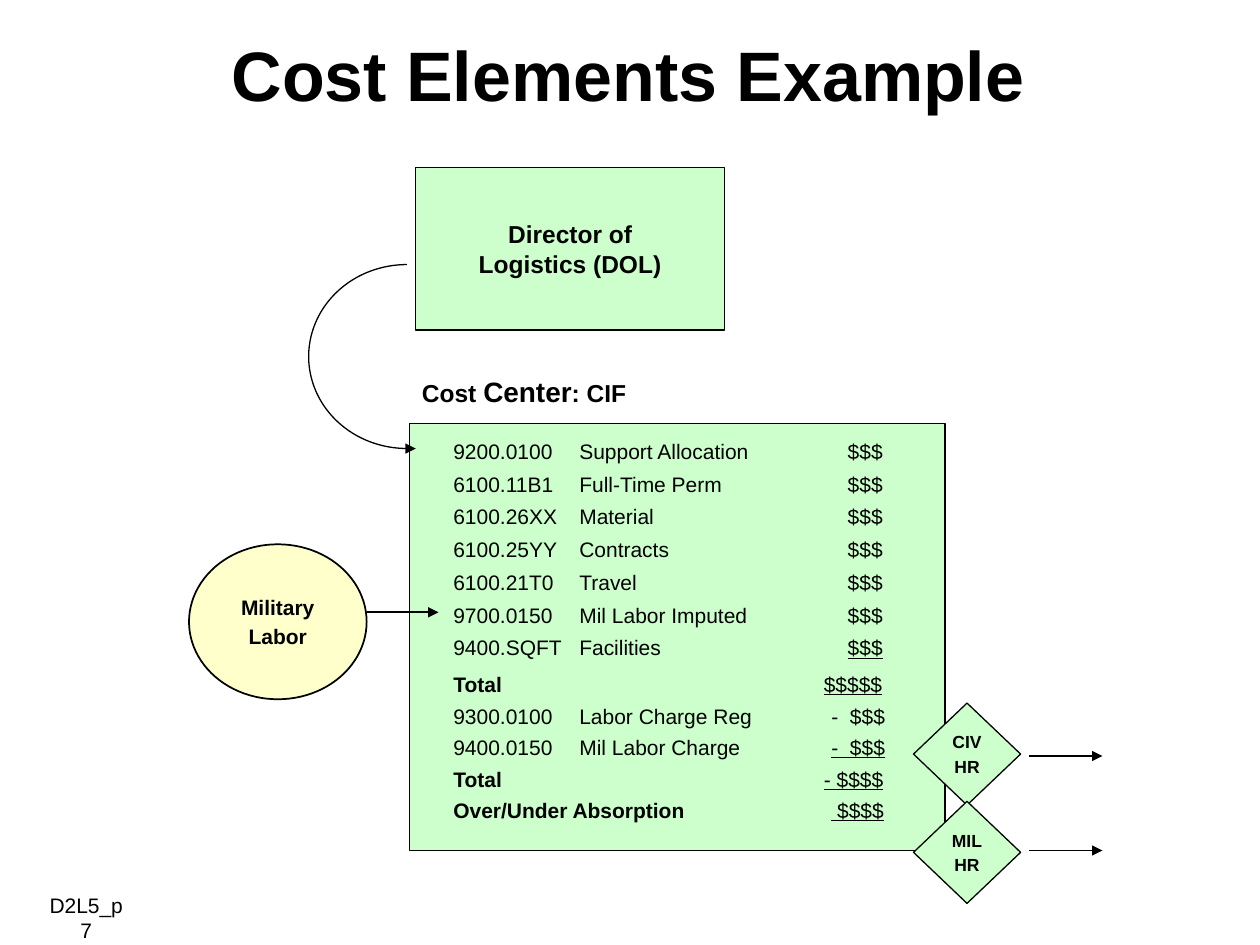
from lxml import etree
from pptx import Presentation
from pptx.dml.color import RGBColor
from pptx.enum.shapes import MSO_CONNECTOR, MSO_SHAPE
from pptx.enum.text import MSO_ANCHOR, PP_ALIGN
from pptx.oxml.ns import qn
from pptx.util import Inches, Pt

LEFT, CENTER = PP_ALIGN.LEFT, PP_ALIGN.CENTER
TOP, MIDDLE = MSO_ANCHOR.TOP, MSO_ANCHOR.MIDDLE
RECTANGLE, OVAL = MSO_SHAPE.RECTANGLE, MSO_SHAPE.OVAL
DIAMOND, ARC = MSO_SHAPE.DIAMOND, MSO_SHAPE.ARC
BLACK, GREEN, YELLOW = "000000", "CCFFCC", "FFFFCC"

# Code, label, value, value position, value underlined
COST_ROWS = [
    ("9200.0100", "Support Allocation", "$$$", 3.13, False),
    ("6100.11B1", "Full-Time Perm", "$$$", 3.13, False),
    ("6100.26XX", "Material", "$$$", 3.13, False),
    ("6100.25YY", "Contracts", "$$$", 3.13, False),
    ("6100.21T0", "Travel", "$$$", 3.13, False),
    ("9700.0150", "Mil Labor Imputed", "$$$", 3.13, False),
    ("9400.SQFT", "Facilities", "$$$", 3.13, True),
]
# A row without a label is a bold sum row
ABSORPTION_ROWS = [
    ("Total", "", "$$$$$", 2.94, True),
    ("9300.0100", "Labor Charge Reg", "-  $$$", 3, False),
    ("9400.0150", "Mil Labor Charge", "-  $$$", 3, True),
    ("Total", "", "- $$$$", 2.94, True),
    ("Over/Under Absorption", "", " $$$$", 3, True),
]
# Rows, first top, step
ROW_BLOCKS = [(COST_ROWS, 3.48, 0.26), (ABSORPTION_ROWS, 5.33, 0.25)]
LABEL_TAB = 1

# Kind, box, fill, line width, lines of text, size, space after
NODES = [
    (RECTANGLE, (3.25, 3.36, 4.25, 3.39), GREEN, 0.75, [], 12, 0),
    (DIAMOND, (7.25, 5.58, 0.85, 0.81), GREEN, 0.75, ["CIV", "HR"], 10, 2),
    (OVAL, (1.5, 4.32, 1.41, 1.23), YELLOW, 1, ["Military", "Labor"], 12, 2),
    (RECTANGLE, (3.3, 1.33, 2.45, 1.29), GREEN, 0.75,
     ["Director of", "Logistics (DOL)"], 14, 0),
    (DIAMOND, (7.25, 6.36, 0.85, 0.81), GREEN, 0.75, ["MIL", "HR"], 10, 2),
]
ALLOCATION_ARC = (2.45, 2.1, 1.56, 1.46)
# Start x, end x, y, width
ARROWS = [
    (3.21, 3.3, 3.56, 0.75),
    (2.91, 3.48, 4.86, 1),
    (8.17, 8.75, 6, 1),
    (8.17, 8.75, 6.75, 1),
]
# Box, top inset, alignment, runs of (text, size, bold)
TEXTS = [
    ((1.32, 0.25, 7.33, 0.67), 0, CENTER, [("Cost Elements Example", 40, True)]),
    ((3.25, 2.92, 2.27, 0.37), 0.05, LEFT,
     [("Cost ", 14, True), ("Center", 16, True), (": CIF", 14, True)]),
    ((0.25, 7.08, 0.87, 0.2), 0, CENTER, [("D2L5_p7", 12, False)]),
]


def color(value):
    return RGBColor.from_string(value)


def format_font(font, size, bold=False, underline=False):
    font.name = "Arial"
    font.size = Pt(size)
    font.bold = bold
    font.underline = underline
    font.color.rgb = color(BLACK)


def set_line(line, width):
    line.color.rgb = color(BLACK)
    line.width = Pt(width)


def add_text(slide, box, inset, alignment, runs, tabs=()):
    """Add a one-paragraph text box; each run is (text, size, bold[, underline])."""
    text_frame = slide.shapes.add_textbox(*map(Inches, box)).text_frame
    text_frame.word_wrap = True
    text_frame.vertical_anchor = TOP
    text_frame.margin_top = text_frame.margin_bottom = Inches(inset)
    paragraph = text_frame.paragraphs[0]
    paragraph.alignment = alignment
    if tabs:
        tab_list = etree.SubElement(paragraph._p.get_or_add_pPr(), qn("a:tabLst"))
        for position in tabs:
            etree.SubElement(tab_list, qn("a:tab"), pos=str(Inches(position)), algn="l")
    for text, *style in runs:
        run = paragraph.add_run()
        run.text = text
        format_font(run.font, *style)


def add_row(slide, top, code, label, value, value_tab, underline):
    if label:
        lead, tabs = f"{code}\t{label}\t", (LABEL_TAB, value_tab)
    else:
        lead, tabs = f"{code}\t", (value_tab,)
    runs = [(lead, 12, not label), (value, 12, False, underline)]
    add_text(slide, (3.5, top, 4.17, 0.2), 0, LEFT, runs, tabs)


def add_node(slide, kind, box, fill, width, lines, size, space_after):
    shape = slide.shapes.add_shape(kind, *map(Inches, box))
    shape.shadow.inherit = False
    shape.fill.solid()
    shape.fill.fore_color.rgb = color(fill)
    set_line(shape.line, width)
    if not lines:
        return
    text_frame = shape.text_frame
    text_frame.text = "\n".join(lines)
    text_frame.word_wrap = False
    text_frame.vertical_anchor = MIDDLE
    text_frame.margin_top = text_frame.margin_bottom = 0
    for paragraph in text_frame.paragraphs:
        paragraph.alignment = CENTER
        paragraph.space_after = Pt(space_after)
        format_font(paragraph.runs[0].font, size, True)


def add_arc(slide):
    """Draw the left half of an ellipse, from its bottom to its top."""
    arc = slide.shapes.add_shape(ARC, *map(Inches, ALLOCATION_ARC))
    arc.shadow.inherit = False
    arc.adjustments[0] = 54  # 90 degrees
    arc.adjustments[1] = 162  # 270 degrees
    arc.fill.background()
    set_line(arc.line, 0.75)


def add_arrow(slide, start, end, y, width):
    arrow = slide.shapes.add_connector(
        MSO_CONNECTOR.STRAIGHT, Inches(start), Inches(y), Inches(end), Inches(y))
    set_line(arrow.line, width)
    properties = arrow._element.spPr
    etree.SubElement(properties.find(qn("a:ln")), qn("a:tailEnd"), type="triangle")
    etree.SubElement(properties, qn("a:effectLst"))


def main():
    presentation = Presentation()
    presentation.slide_width = Inches(10)
    presentation.slide_height = Inches(7.5)
    slide = presentation.slides.add_slide(presentation.slide_layouts[6])
    for node in NODES:
        add_node(slide, *node)
    add_arc(slide)
    for arrow in ARROWS:
        add_arrow(slide, *arrow)
    for text in TEXTS:
        add_text(slide, *text)
    for rows, first_top, step in ROW_BLOCKS:
        for index, row in enumerate(rows):
            add_row(slide, first_top + index * step, *row)
    presentation.save("out.pptx")


if __name__ == "__main__":
    main()
